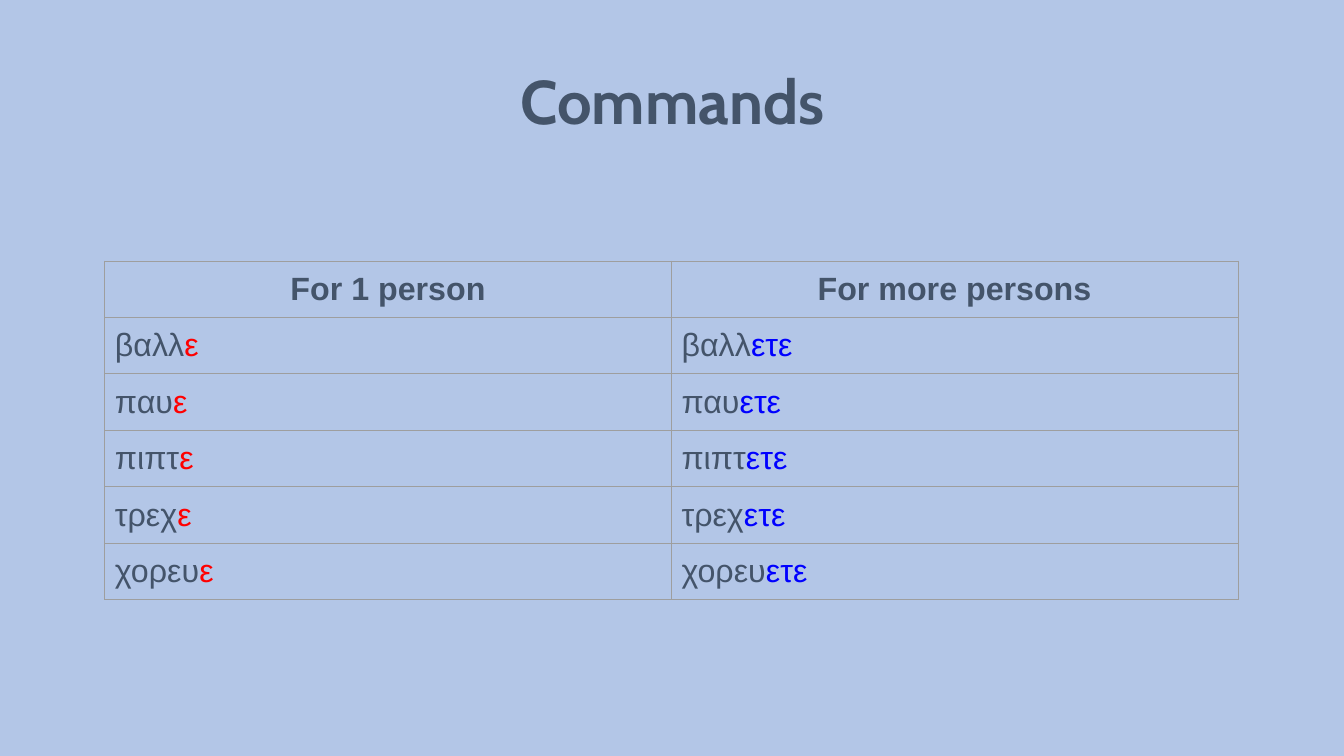
from lxml import etree
from pptx import Presentation
from pptx.dml.color import RGBColor
from pptx.enum.text import MSO_ANCHOR, MSO_AUTO_SIZE, PP_ALIGN
from pptx.oxml.ns import qn
from pptx.util import Inches, Pt

CENTER, LEFT = PP_ALIGN.CENTER, PP_ALIGN.LEFT
MIDDLE, TOP = MSO_ANCHOR.MIDDLE, MSO_ANCHOR.TOP
NO_AUTOFIT = MSO_AUTO_SIZE.NONE

THEME = {
    "background": "B3C6E7",
    "text": "44546A",
    "singular": "FF0000",
    "plural": "0000FF",
    "border": "9E9E9E",
    "title_font": "Cabin",
    "body_font": "Arial",
    "title_size": 44,
    "body_size": 23,
    "border_width": 0.75,
}
HEADERS = ["For 1 person", "For more persons"]
STEMS = ["βαλλ", "παυ", "πιπτ", "τρεχ", "χορευ"]
ENDINGS = [("ε", THEME["singular"]), ("ετε", THEME["plural"])]
COL_WIDTH, ROW_HEIGHT = Inches(5.62), Inches(0.56)


def add_text(p, text, color=THEME["text"], size=THEME["body_size"],
             font=THEME["body_font"], bold=False, align=LEFT):
    p.alignment = align
    r = p.add_run()
    r.text = text
    r.font.name = font
    r.font.size = Pt(size)
    r.font.bold = bold
    r.font.color.rgb = RGBColor.from_string(color)


def format_cell(cell):
    cell.margin_left = cell.margin_right = Inches(0.1)
    cell.margin_top = cell.margin_bottom = Inches(0.1)
    cell.vertical_anchor = TOP
    tcPr = cell._tc.get_or_add_tcPr()
    for side in ("a:lnL", "a:lnR", "a:lnT", "a:lnB"):
        ln = etree.SubElement(tcPr, qn(side), w=str(Pt(THEME["border_width"])))
        fill = etree.SubElement(ln, qn("a:solidFill"))
        etree.SubElement(fill, qn("a:srgbClr"), val=THEME["border"])
    cell.fill.background()


prs = Presentation()
prs.slide_width, prs.slide_height = Inches(13.33), Inches(7.5)
s = prs.slides.add_slide(prs.slide_layouts[5])
s.background.fill.solid()
s.background.fill.fore_color.rgb = RGBColor.from_string(THEME["background"])

rows, cols = len(STEMS) + 1, len(HEADERS)
frame = s.shapes.add_table(rows, cols, Inches(1.04), Inches(2.59),
                           COL_WIDTH * cols, ROW_HEIGHT * rows)
table = frame.table
table.first_row = table.horz_banding = False

for col, (header, (ending, color)) in enumerate(zip(HEADERS, ENDINGS)):
    table.columns[col].width = COL_WIDTH
    cell = table.cell(0, col)
    format_cell(cell)
    add_text(cell.text_frame.paragraphs[0], header, bold=True, align=CENTER)
    for row, stem in enumerate(STEMS, start=1):
        cell = table.cell(row, col)
        format_cell(cell)
        p = cell.text_frame.paragraphs[0]
        add_text(p, stem)
        add_text(p, ending, color=color)

title = s.shapes.title
title.left, title.top = Inches(1.42), Inches(0.53)
title.width, title.height = Inches(10.5), Inches(1.02)
tf = title.text_frame
tf.word_wrap = True
tf.auto_size = NO_AUTOFIT
tf.vertical_anchor = MIDDLE
tf.margin_left = tf.margin_right = Inches(0.1)
tf.margin_top = tf.margin_bottom = Inches(0.05)
p = tf.paragraphs[0]
p.line_spacing = 0.9
add_text(p, "Commands", size=THEME["title_size"], font=THEME["title_font"],
         bold=True, align=CENTER)

prs.save("out.pptx")
